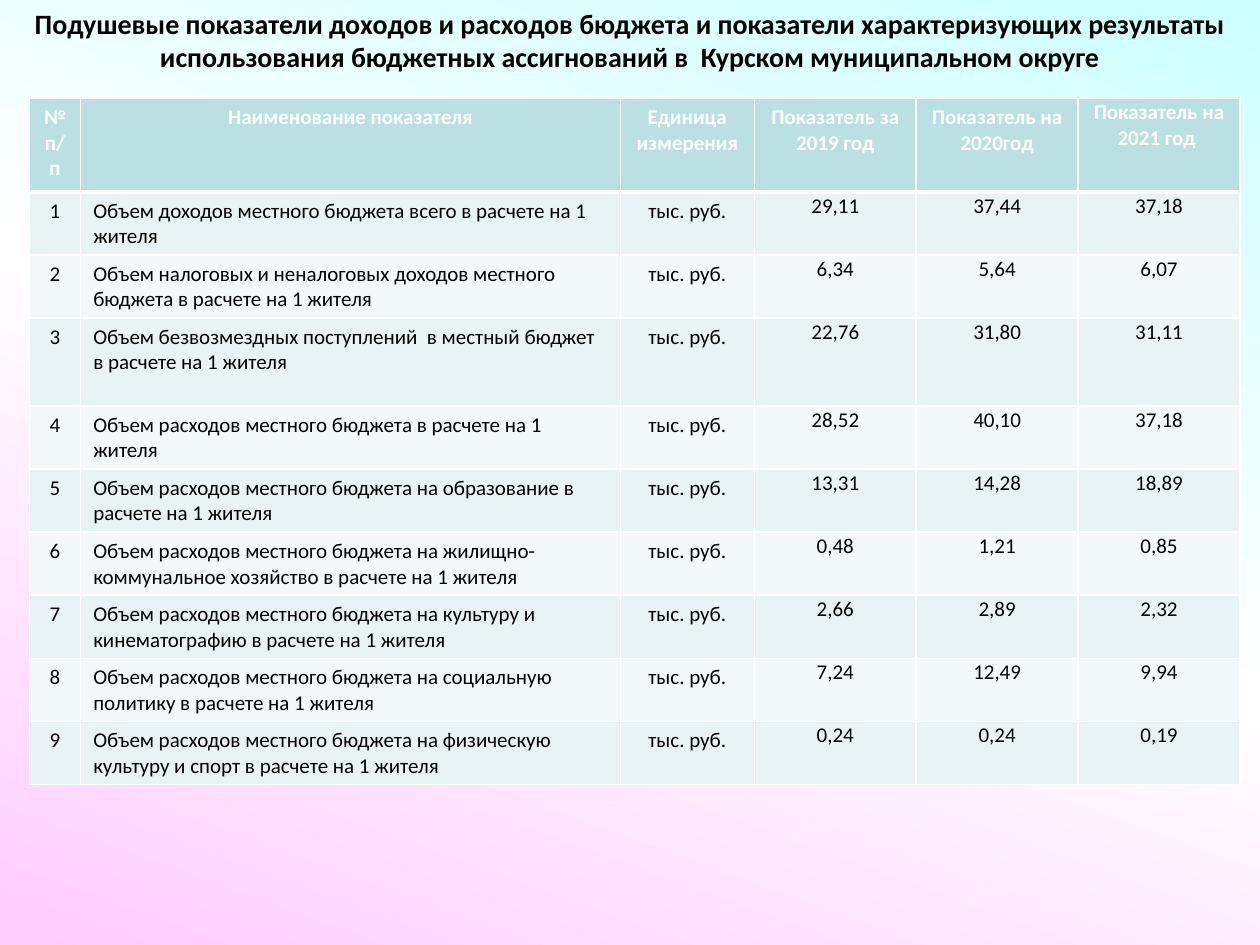
from copy import deepcopy
from dataclasses import dataclass

from pptx import Presentation
from pptx.dml.color import RGBColor as RGB
from pptx.enum.text import MSO_AUTO_SIZE as AUTO, PP_ALIGN as ALIGN
from pptx.oxml.ns import qn
from pptx.util import Pt
from lxml.etree import SubElement


@dataclass(frozen=True)
class Theme:
    font: str = "Calibri"
    title_size: int = 16
    table_size: int = 12
    text: str = "000000"
    header_text: str = "FFFFFF"
    header_fill: str = "BBE0E3"
    bands: tuple = ("E7F3F4", "F3F9FA")
    border: str = "FFFFFF"
    gradient: tuple = ("CCFFFF", "FFFFFF", "FFCCFF")


THEME = Theme()

TITLE = ("Подушевые показатели доходов и расходов бюджета и показатели "
         "характеризующих результаты использования бюджетных ассигнований "
         "в  Курском муниципальном округе")
HEADER = ("№ п/п", "Наименование показателя", "Единица измерения",
          "Показатель за 2019 год", "Показатель на 2020год",
          "Показатель на 2021 год ")
UNIT = "тыс. руб."
INDICATORS = (
    ("Объем доходов местного бюджета всего в расчете на 1 жителя",
     "29,11", "37,44", "37,18"),
    ("Объем налоговых и неналоговых доходов местного бюджета в расчете на 1 жителя",
     "6,34", "5,64", "6,07"),
    ("Объем безвозмездных поступлений  в местный бюджет в расчете на 1 жителя",
     "22,76", "31,80", "31,11"),
    ("Объем расходов местного бюджета в расчете на 1 жителя",
     "28,52", "40,10", "37,18"),
    ("Объем расходов местного бюджета на образование в расчете на 1 жителя",
     "13,31", "14,28", "18,89"),
    ("Объем расходов местного бюджета на жилищно-коммунальное хозяйство "
     "в расчете на 1 жителя", "0,48", "1,21", "0,85"),
    ("Объем расходов местного бюджета на культуру и кинематографию "
     "в расчете на 1 жителя", "2,66", "2,89", "2,32"),
    ("Объем расходов местного бюджета на социальную политику в расчете на 1 жителя",
     "7,24", "12,49", "9,94"),
    ("Объем расходов местного бюджета на физическую культуру и спорт "
     "в расчете на 1 жителя", "0,24", "0,24", "0,19"),
)
NAME_COL, FIRST_VALUE_COL, LAST_COL = 1, 3, 5
COL_WIDTHS = (29.3, 308.4, 76.6, 92.5, 92.5, 92.5)
HEADER_HEIGHT, ROW_HEIGHT, TALL_ROW_HEIGHT = 53.5, 36, 50.3
TALL_ROW = 3


def set_background(slide):
    fill = slide.background.fill
    fill.gradient()
    fill.gradient_angle = 250
    stop_list = next(slide.background._cSld.iter(qn("a:gsLst")))
    stop_list.insert(1, deepcopy(stop_list[0]))
    for i, (stop, color) in enumerate(zip(fill.gradient_stops, THEME.gradient)):
        stop.color.rgb = RGB.from_string(color)
        stop.position = i / 2


def format_text(tf, size, color, bold, align):
    for p in tf.paragraphs:
        p.alignment = align
        for r in p.runs:
            r.font.name = THEME.font
            r.font.size = Pt(size)
            r.font.bold = bold
            r.font.color.rgb = RGB.from_string(color)


def add_title(slide):
    tf = slide.shapes.add_textbox(0, 0, Pt(720), Pt(46)).text_frame
    tf.word_wrap = True
    tf.auto_size = AUTO.SHAPE_TO_FIT_TEXT
    tf.text = TITLE
    format_text(tf, THEME.title_size, THEME.text, True, ALIGN.CENTER)


def set_borders(cell, top, bottom):
    """Draw all four sides; must precede the fill in the cell properties."""
    tc_pr = cell._tc.get_or_add_tcPr()
    for side, width in (("L", 1), ("R", 1), ("T", top), ("B", bottom)):
        ln = SubElement(tc_pr, qn(f"a:ln{side}"), w=str(Pt(width)))
        SubElement(SubElement(ln, qn("a:solidFill")), qn("a:srgbClr"),
                   val=THEME.border)


def fill_cell(cell, text, row, col):
    is_header = row == 0
    set_borders(cell, top=3 if row == 1 else 1, bottom=3 if is_header else 1)
    cell.fill.solid()
    cell.fill.fore_color.rgb = RGB.from_string(
        THEME.header_fill if is_header else THEME.bands[(row - 1) % 2])
    if col == LAST_COL or (col >= FIRST_VALUE_COL and not is_header):
        cell.margin_left = cell.margin_right = cell.margin_top = Pt(0.7)
        cell.margin_bottom = 0
    cell.text_frame.text = text
    left = col == NAME_COL and not is_header
    format_text(cell.text_frame, THEME.table_size,
                THEME.header_text if is_header else THEME.text,
                is_header, ALIGN.LEFT if left else ALIGN.CENTER)


def add_indicator_table(slide):
    rows = [HEADER] + [(str(n), name, UNIT, *values)
                       for n, (name, *values) in enumerate(INDICATORS, 1)]
    heights = [HEADER_HEIGHT] + [ROW_HEIGHT] * len(INDICATORS)
    heights[TALL_ROW] = TALL_ROW_HEIGHT
    table = slide.shapes.add_table(
        len(rows), len(HEADER), Pt(16.8), Pt(56.2),
        Pt(sum(COL_WIDTHS)), Pt(sum(heights))).table
    for column, width in zip(table.columns, COL_WIDTHS):
        column.width = Pt(width)
    for i, (texts, height) in enumerate(zip(rows, heights)):
        table.rows[i].height = Pt(height)
        for j, text in enumerate(texts):
            fill_cell(table.cell(i, j), text, i, j)


def main():
    prs = Presentation()
    prs.slide_width, prs.slide_height = Pt(720), Pt(540)
    slide = prs.slides.add_slide(prs.slide_layouts[6])
    set_background(slide)
    add_title(slide)
    add_indicator_table(slide)
    prs.save("out.pptx")


if __name__ == "__main__":
    main()
